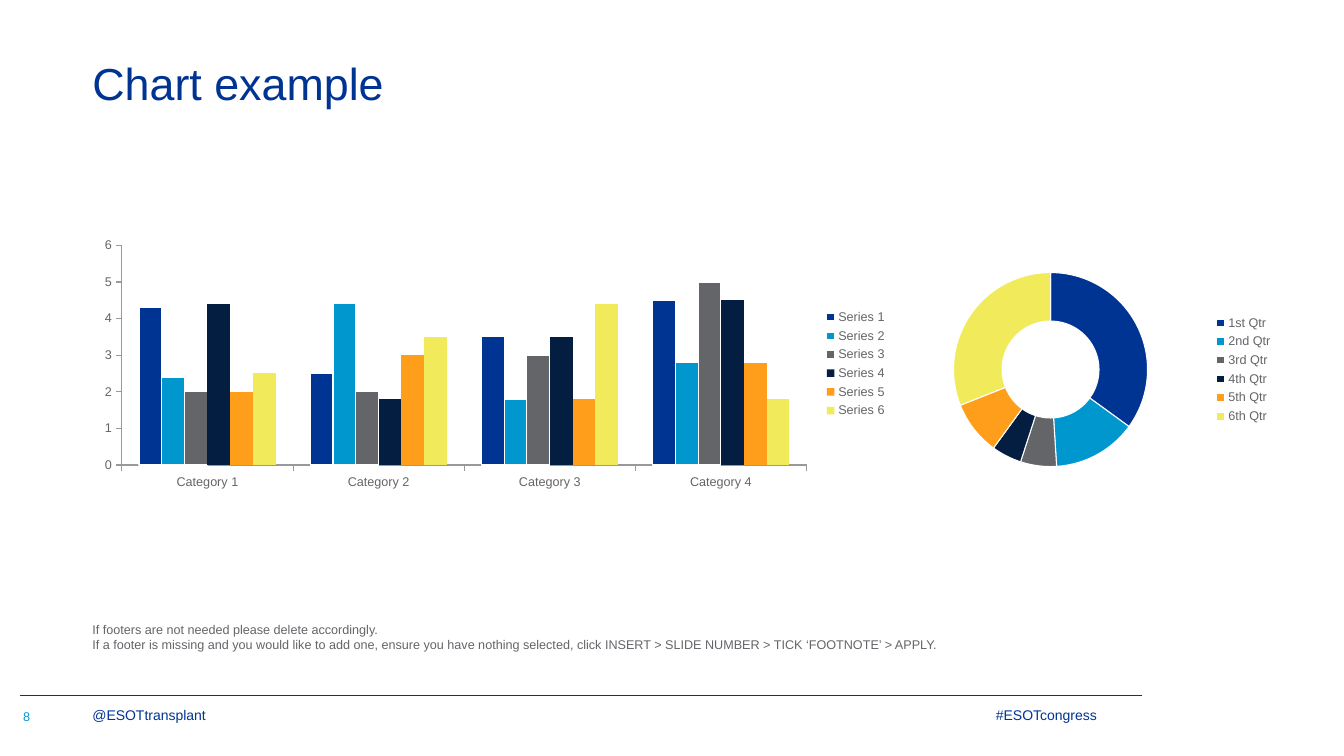
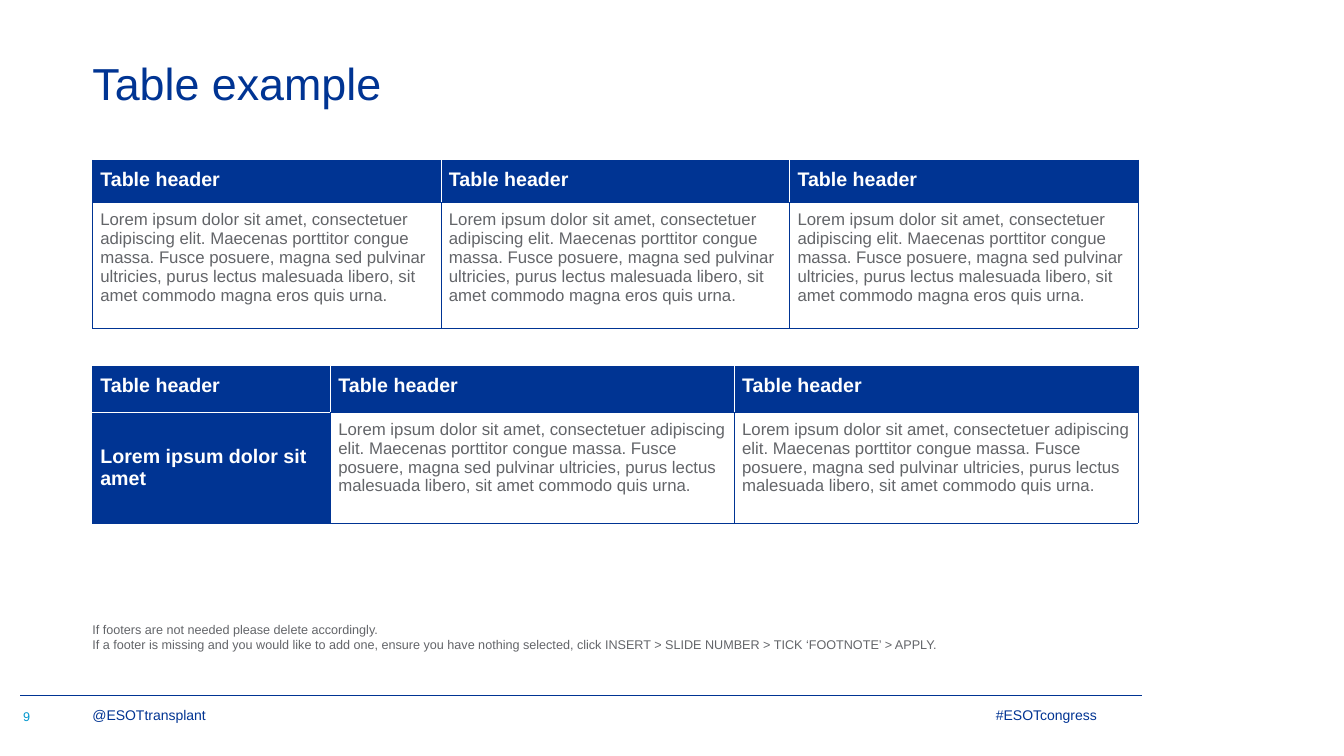
from lxml import etree
from pptx import Presentation
from pptx.chart.data import CategoryChartData
from pptx.dml.color import RGBColor
from pptx.enum.chart import XL_CHART_TYPE, XL_LEGEND_POSITION, XL_TICK_MARK
from pptx.enum.shapes import MSO_CONNECTOR
from pptx.enum.text import MSO_ANCHOR, MSO_AUTO_SIZE, PP_ALIGN
from pptx.oxml.ns import qn
from pptx.util import Pt

BLUE = RGBColor(0x00, 0x34, 0x93)
SKY = RGBColor(0x00, 0x97, 0xCE)
GREY = RGBColor(0x63, 0x65, 0x69)
NAVY = RGBColor(0x04, 0x1E, 0x41)
ORANGE = RGBColor(0xFF, 0x9E, 0x1B)
YELLOW = RGBColor(0xF1, 0xEB, 0x5B)
WHITE = RGBColor(0xFF, 0xFF, 0xFF)
AXIS_GREY = RGBColor(0x99, 0x99, 0x99)
PALETTE = [BLUE, SKY, GREY, NAVY, ORANGE, YELLOW]

FONT = "Arial"
MARGIN = 66
CONTENT_WIDTH = 828
CELL_INSET = Pt(5.67)

FOOTNOTE = (
    "If footers are not needed please delete accordingly.\v"
    "If a footer is missing and you would like to add one, ensure you have nothing "
    "selected, click INSERT > SLIDE NUMBER > TICK ‘FOOTNOTE’ > APPLY."
)
LOREM = (
    "Lorem ipsum dolor sit amet, consectetuer adipiscing elit. Maecenas porttitor "
    "congue massa. Fusce posuere, magna sed pulvinar ultricies, purus lectus "
    "malesuada libero, sit amet commodo "
)


def style_font(font, size, color, bold=False):
    font.name = FONT
    font.size = Pt(size)
    font.bold = bold
    font.color.rgb = color


def write(frame, text, size, color, bold=False):
    frame.text = text
    for paragraph in frame.paragraphs:
        for run in paragraph.runs:
            style_font(run.font, size, color, bold)


def fill_frame(frame, text, size, color, anchor=MSO_ANCHOR.BOTTOM, align=PP_ALIGN.LEFT):
    """Write text into a frame without insets."""
    frame.word_wrap = True
    frame.auto_size = MSO_AUTO_SIZE.NONE
    frame.vertical_anchor = anchor
    frame.margin_left = frame.margin_right = frame.margin_top = frame.margin_bottom = 0
    write(frame, text, size, color)
    frame.paragraphs[0].alignment = align


def add_label(slide, box, text, size, color, align=PP_ALIGN.LEFT):
    label = slide.shapes.add_textbox(*map(Pt, box))
    fill_frame(label.text_frame, text, size, color, align=align)


def add_title(slide, text):
    title = slide.shapes.title
    title.left, title.top = Pt(MARGIN), Pt(28.8)
    title.width, title.height = Pt(CONTENT_WIDTH), Pt(65.5)
    fill_frame(title.text_frame, text, 32, BLUE, MSO_ANCHOR.MIDDLE)
    title.text_frame.paragraphs[0].line_spacing = 0.9


def add_footer(slide, number):
    rule = slide.shapes.add_connector(
        MSO_CONNECTOR.STRAIGHT, Pt(14.4), Pt(496.8), Pt(816), Pt(496.8)
    )
    rule.line.color.rgb = BLUE
    rule.line.width = Pt(0.5)
    etree.SubElement(rule._element.spPr, qn("a:effectLst"))
    add_label(slide, (697, 504.7, 86.4, 12.2), "#ESOTcongress", 10, BLUE, PP_ALIGN.RIGHT)
    add_label(slide, (MARGIN, 504.7, 96, 12.2), "@ESOTtransplant", 10, BLUE)
    add_label(slide, (MARGIN, 437, CONTENT_WIDTH, 28.8), FOOTNOTE, 9, GREY)
    add_label(slide, (16.5, 499, 27.4, 18), str(number), 9, SKY)


def new_slide(presentation, title, number):
    slide = presentation.slides.add_slide(presentation.slide_layouts[5])
    add_title(slide, title)
    add_footer(slide, number)
    return slide


def paint(part, color, outlined):
    part.format.fill.solid()
    part.format.fill.fore_color.rgb = color
    if outlined:
        part.format.line.color.rgb = WHITE
        part.format.line.width = Pt(0.75)


def add_legend_chart(slide, kind, box, categories, series):
    """Add a chart with its legend on the right."""
    data = CategoryChartData()
    data.categories = categories
    for name, values in series:
        data.add_series(name, values)
    chart = slide.shapes.add_chart(kind, *map(Pt, box), data).chart
    chart.has_title = False
    style_font(chart.font, 18, GREY)
    chart.has_legend = True
    chart.legend.position = XL_LEGEND_POSITION.RIGHT
    chart.legend.include_in_layout = False
    style_font(chart.legend.font, 9, GREY)
    return chart


def add_column_chart(slide, box):
    rows = [
        (4.3, 2.5, 3.5, 4.5),
        (2.4, 4.4, 1.8, 2.8),
        (2, 2, 3, 5),
        (4.4, 1.8, 3.5, 4.5),
        (2, 3, 1.8, 2.8),
        (2.5, 3.5, 4.4, 1.8),
    ]
    chart = add_legend_chart(
        slide,
        XL_CHART_TYPE.COLUMN_CLUSTERED,
        box,
        [f"Category {i}" for i in range(1, 5)],
        [(f"Series {i}", values) for i, values in enumerate(rows, 1)],
    )
    plot = chart.plots[0]
    plot.vary_by_categories = False
    plot.gap_width = 150
    plot.overlap = 0
    for i, (series, color) in enumerate(zip(plot.series, PALETTE)):
        series.invert_if_negative = False
        paint(series, color, outlined=i < 3)
    for axis in (chart.category_axis, chart.value_axis):
        axis.has_major_gridlines = False
        axis.major_tick_mark = XL_TICK_MARK.OUTSIDE
        axis.minor_tick_mark = XL_TICK_MARK.NONE
        axis.format.line.color.rgb = AXIS_GREY
        axis.format.line.width = Pt(0.75)
        style_font(axis.tick_labels.font, 9, GREY)
    chart.value_axis.minimum_scale = 0
    chart.value_axis.maximum_scale = 6
    chart.value_axis.major_unit = 1


def place_plot(chart, x, y, w, h):
    """Fix the inner plot area, in fractions of the chart."""
    area = chart._chartSpace.find(".//" + qn("c:plotArea"))
    for old in area.findall(qn("c:layout")):
        area.remove(old)
    layout = etree.Element(qn("c:layout"))
    area.insert(0, layout)
    manual = etree.SubElement(layout, qn("c:manualLayout"))
    settings = [("layoutTarget", "inner"), ("xMode", "edge"), ("yMode", "edge"),
                ("x", x), ("y", y), ("w", w), ("h", h)]
    for tag, value in settings:
        etree.SubElement(manual, qn(f"c:{tag}")).set("val", str(value))


def add_quarter_doughnut(slide, box):
    chart = add_legend_chart(
        slide,
        XL_CHART_TYPE.DOUGHNUT,
        box,
        ["1st Qtr", "2nd Qtr", "3rd Qtr", "4th Qtr", "5th Qtr", "6th Qtr"],
        [("Series 1", (35, 14, 6, 5, 9, 31))],
    )
    plot = chart.plots[0]
    plot.vary_by_categories = True
    plot.has_data_labels = False
    for i, color in enumerate(PALETTE):
        paint(plot.series[0].points[i], color, outlined=True)
    place_plot(chart, 0.07, 0.15, 0.55, 0.7)


def set_borders(cell, colors):
    """Draw the left, right, top and bottom borders in the given colours."""
    properties = cell._tc.get_or_add_tcPr()
    for i, (side, color) in enumerate(zip("LRTB", colors)):
        line = etree.Element(qn(f"a:ln{side}"), w=str(Pt(0.5)))
        fill = etree.SubElement(line, qn("a:solidFill"))
        etree.SubElement(fill, qn("a:srgbClr"), val=str(color))
        properties.insert(i, line)


def add_header_table(slide, top, col_widths, row_heights, rows, header_column=False):
    """Add a table whose borders are white between header cells and blue elsewhere."""
    table = slide.shapes.add_table(
        len(rows), len(col_widths), Pt(MARGIN), Pt(top),
        Pt(sum(col_widths)), Pt(sum(row_heights)),
    ).table
    table.horz_banding = False
    table.first_col = header_column
    for column, width in zip(table.columns, col_widths):
        column.width = Pt(width)
    for row, height in zip(table.rows, row_heights):
        row.height = Pt(height)

    headers = {
        (r, c)
        for r in range(len(rows))
        for c in range(len(col_widths))
        if r == 0 or (header_column and c == 0)
    }
    for r, texts in enumerate(rows):
        for c, text in enumerate(texts):
            cell = table.cell(r, c)
            cell.margin_left = cell.margin_right = CELL_INSET
            cell.margin_top = cell.margin_bottom = CELL_INSET
            is_header = (r, c) in headers
            if is_header:
                cell.fill.solid()
                cell.fill.fore_color.rgb = BLUE
                write(cell.text_frame, text, 14, WHITE, bold=True)
            else:
                cell.fill.background()
                write(cell.text_frame, text, 12, GREY)
            cell.vertical_anchor = MSO_ANCHOR.MIDDLE if is_header and r else MSO_ANCHOR.TOP
            neighbours = [(r, c - 1), (r, c + 1), (r - 1, c), (r + 1, c)]
            set_borders(cell, [WHITE if is_header and n in headers else BLUE
                               for n in neighbours])


def build_chart_slide(presentation):
    slide = new_slide(presentation, "Chart example", 8)
    add_column_chart(slide, (63.4, 166.3, 577.4, 187.2))
    add_quarter_doughnut(slide, (663, 165, 253.4, 198))


def build_table_slide(presentation):
    slide = new_slide(presentation, "Table example", 9)
    header_row = ["Table header"] * 3
    add_header_table(
        slide, 114.5, [249] * 3, [30.2, 89.5],
        [header_row, [LOREM + "magna eros quis urna."] * 3],
    )
    add_header_table(
        slide, 262, [170, 288.5, 288.5], [32.4, 79.2],
        [header_row, ["Lorem ipsum dolor sit amet"] + [LOREM + "quis urna."] * 2],
        header_column=True,
    )


def main():
    presentation = Presentation()
    presentation.slide_width, presentation.slide_height = Pt(960), Pt(540)
    build_chart_slide(presentation)
    build_table_slide(presentation)
    presentation.save("out.pptx")


if __name__ == "__main__":
    main()
